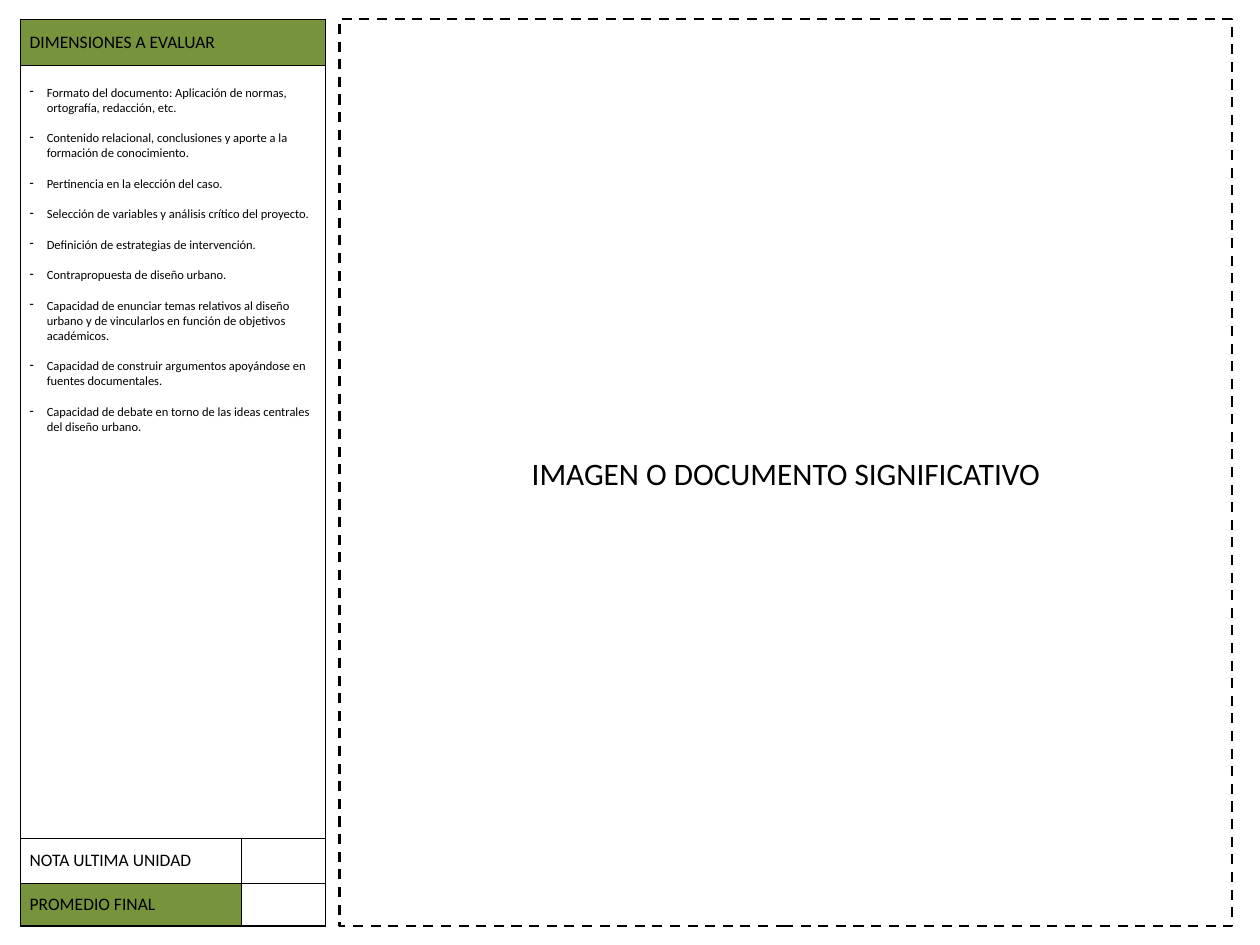
from dataclasses import dataclass

import pptx
import pptx.dml.color
import pptx.enum.dml
import pptx.enum.shapes
import pptx.enum.text
import pptx.oxml
import pptx.oxml.ns
import pptx.util

Inches, Pt = pptx.util.Inches, pptx.util.Pt
RGB = pptx.dml.color.RGBColor.from_string
MIDDLE = pptx.enum.text.MSO_ANCHOR.MIDDLE


@dataclass(frozen=True)
class Theme:
    font: str = "Calibri"
    ink: str = "000000"
    green: str = "77933C"
    paper: str = "FFFFFF"
    list_size: float = 10
    label_size: float = 14
    frame_size: float = 25
    thin: float = 0.5
    line: float = 1
    frame_line: float = 2


THEME = Theme()
CRITERIA = [
    "Formato del documento: Aplicación de normas, ortografía, redacción, etc.",
    "Contenido relacional, conclusiones y aporte a la formación de conocimiento.",
    "Pertinencia en la elección del caso.",
    "Selección de variables y análisis crítico del proyecto.",
    "Definición de estrategias de intervención.",
    "Contrapropuesta de diseño urbano.",
    "Capacidad de enunciar temas relativos al diseño urbano y de vincularlos "
    "en función de objetivos académicos.",
    "Capacidad de construir argumentos apoyándose en fuentes documentales.",
    "Capacidad de debate en torno de las ideas centrales del diseño urbano.",
]


def set_font(p, size):
    p.font.name = THEME.font
    p.font.size = Pt(size)
    p.font.color.rgb = RGB(THEME.ink)


def set_borders(cell, left, right, top, bottom):
    tcPr = cell._tc.get_or_add_tcPr()
    for i, (side, width) in enumerate(zip("LRTB", (left, right, top, bottom))):
        tcPr.insert(i, pptx.oxml.parse_xml(
            f'<a:ln{side} {pptx.oxml.ns.nsdecls("a")} w="{Pt(width)}">'
            f'<a:solidFill><a:srgbClr val="{THEME.ink}"/></a:solidFill>'
            f'</a:ln{side}>'))


def write_label(cell, text):
    cell.vertical_anchor = MIDDLE
    p = cell.text_frame.paragraphs[0]
    p.text = text
    set_font(p, THEME.label_size)


def write_criteria(cell):
    cell.margin_top = Inches(0.22)
    tf = cell.text_frame
    for i, text in enumerate(CRITERIA):
        p = tf.add_paragraph() if i else tf.paragraphs[0]
        p.text = text
        set_font(p, THEME.list_size)
        if i:
            p.space_before = Pt(12.2)
        pPr = p._p.get_or_add_pPr()
        pPr.set("marL", str(Inches(0.19)))
        pPr.set("indent", str(Inches(-0.19)))
        bullet = pptx.oxml.parse_xml(
            f'<a:buChar {pptx.oxml.ns.nsdecls("a")} char="-"/>')
        pPr.insert_element_before(bullet, "a:tabLst", "a:defRPr", "a:extLst")


def add_evaluation_table(s, left, top, width, height):
    table = s.shapes.add_table(4, 2, left, top, width, height).table
    table.first_row = table.horz_banding = False
    score_width = Inches(0.94)
    table.columns[0].width = width - score_width
    table.columns[1].width = score_width
    label_heights = {0: Inches(0.52), 2: Inches(0.49), 3: Inches(0.48)}
    for i, row in enumerate(table.rows):
        row.height = label_heights.get(i, height - sum(label_heights.values()))

    thin, line = THEME.thin, THEME.line
    fills = [THEME.green, None, THEME.paper, THEME.green]
    tops = [thin, line, line, thin]
    bottoms = [line, line, thin, line]
    for r, fill in enumerate(fills):
        merged = r < 2
        inner = line if merged else thin
        for c in range(2):
            cell = table.cell(r, c)
            if fill and (c == 0 or merged):
                cell.fill.solid()
                cell.fill.fore_color.rgb = RGB(fill)
            else:
                cell.fill.background()
            set_borders(cell, inner if c else line, line if c else inner,
                        tops[r], bottoms[r])
        if merged:
            table.cell(r, 0).merge(table.cell(r, 1))

    write_label(table.cell(0, 0), "DIMENSIONES A EVALUAR")
    write_criteria(table.cell(1, 0))
    write_label(table.cell(2, 0), "NOTA ULTIMA UNIDAD")
    write_label(table.cell(3, 0), "PROMEDIO FINAL")


def add_document_frame(s, left, top, width, height):
    sp = s.shapes.add_shape(
        pptx.enum.shapes.MSO_SHAPE.RECTANGLE, left, top, width, height)
    sp.shadow.inherit = False
    sp.fill.background()
    sp.line.color.rgb = RGB(THEME.ink)
    sp.line.width = Pt(THEME.frame_line)
    sp.line.dash_style = pptx.enum.dml.MSO_LINE.DASH
    tf = sp.text_frame
    tf.word_wrap = True
    tf.vertical_anchor = MIDDLE
    p = tf.paragraphs[0]
    p.text = "IMAGEN O DOCUMENTO SIGNIFICATIVO"
    p.alignment = pptx.enum.text.PP_ALIGN.CENTER
    set_font(p, THEME.frame_size)


def main():
    prs = pptx.Presentation()
    prs.slide_width, prs.slide_height = Inches(14), Inches(10.5)
    s = prs.slides.add_slide(prs.slide_layouts[6])
    top, height = Inches(0.21), Inches(10.08)
    add_evaluation_table(s, Inches(0.23), top, Inches(3.39), height)
    add_document_frame(s, Inches(3.77), top, Inches(9.92), height)
    prs.save("out.pptx")


if __name__ == "__main__":
    main()
